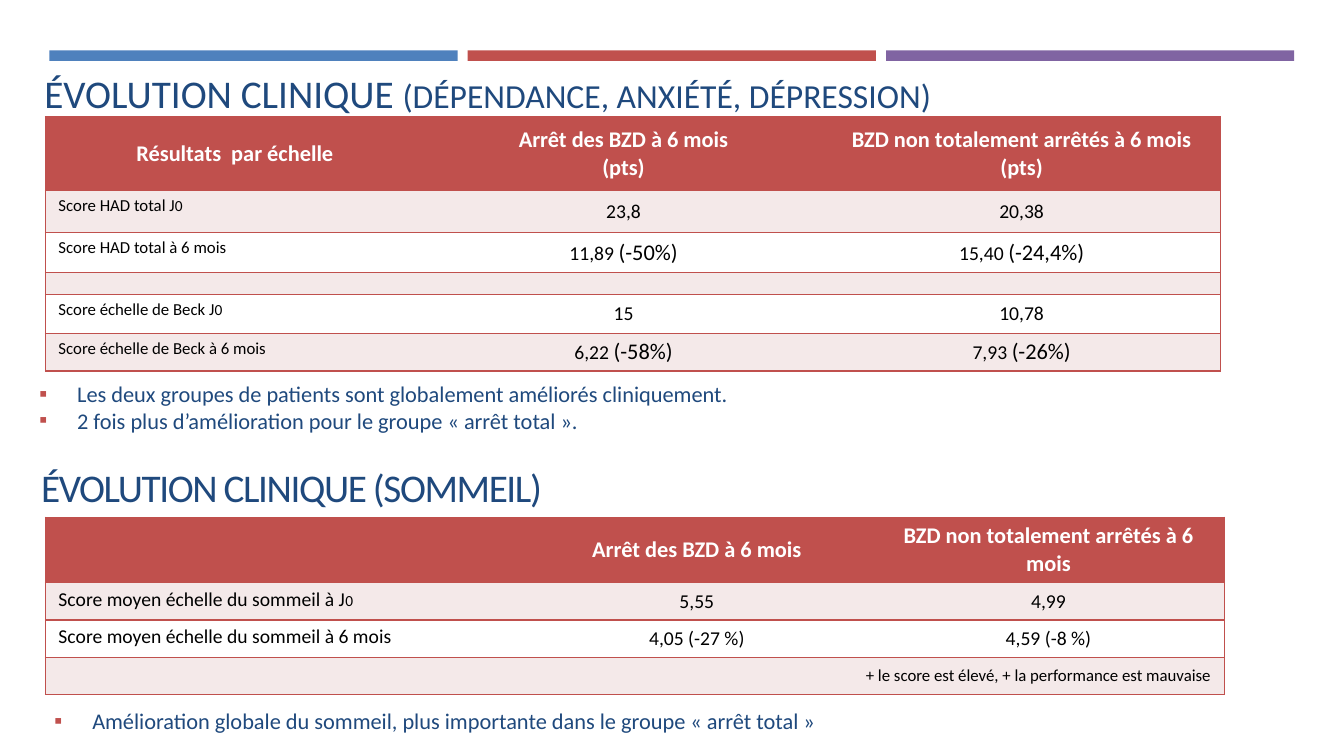
from dataclasses import dataclass

import lxml.etree
import pptx
import pptx.dml.color
import pptx.enum.shapes
import pptx.enum.text
import pptx.oxml.ns
import pptx.util

Pt = pptx.util.Pt
ALIGN = pptx.enum.text.PP_ALIGN
ANCHOR = pptx.enum.text.MSO_ANCHOR


@dataclass(frozen=True)
class Theme:
    font: str = "Calibri"
    navy: str = "1F497D"
    blue: str = "4F81BD"
    red: str = "C0504D"
    purple: str = "8064A2"
    band: str = "F4E9E9"
    white: str = "FFFFFF"
    black: str = "000000"
    heading: int = 28
    subheading: int = 24
    large: int = 16
    medium: int = 14
    small: int = 12
    index: int = 11
    spacer: int = 6


theme = Theme()


def write(paragraph, runs, color, bold=False):
    """Add (text, size) runs to the paragraph in the theme font."""
    for text, size in runs:
        run = paragraph.add_run()
        run.text = text
        for name, value in {"name": theme.font, "size": Pt(size), "bold": bold}.items():
            setattr(run.font, name, value)
        run.font.color.rgb = pptx.dml.color.RGBColor.from_string(color)


def add_xml(parent, tag, position=None, **attributes):
    element = lxml.etree.Element(pptx.oxml.ns.qn(tag), attributes)
    parent.insert(len(parent) if position is None else position, element)
    return element


presentation = pptx.Presentation()
presentation.slide_width, presentation.slide_height = Pt(960), Pt(540)
slide = presentation.slides.add_slide(presentation.slide_layouts.get_by_name("Two Content"))
title, clinical_list, sleep_list = slide.placeholders

# Colour bars
for column, color in enumerate((theme.blue, theme.red, theme.purple)):
    bar = slide.shapes.add_shape(
        pptx.enum.shapes.MSO_SHAPE.RECTANGLE,
        Pt(35.3 + 298.8 * column), Pt(36), Pt(291.6), Pt(7.5))
    bar.shadow.inherit = False
    bar.fill.solid()
    bar.fill.fore_color.rgb = pptx.dml.color.RGBColor.from_string(color)
    bar.line.fill.background()

# Headings
sleep_heading = slide.shapes.add_textbox(0, 0, 0, 0)
headings = [
    (title, (24.5, 30.2, 892, 56.2), ANCHOR.BOTTOM,
     [("ÉVOLUTION CLINIQUE ", theme.heading),
      ("(DÉPENDANCE, ANXIÉTÉ, DÉPRESSION)", theme.subheading)]),
    (sleep_heading, (22.3, 321.8, 815.8, 52.6), ANCHOR.MIDDLE,
     [("ÉVOLUTION CLINIQUE (SOMMEIL)", theme.heading)]),
]
for heading, box, anchor, runs in headings:
    heading.left, heading.top, heading.width, heading.height = map(Pt, box)
    frame = heading.text_frame
    for name, value in {"word_wrap": True, "vertical_anchor": anchor,
                        "auto_size": pptx.enum.text.MSO_AUTO_SIZE.NONE}.items():
        setattr(frame, name, value)
    frame.paragraphs[0].alignment = ALIGN.LEFT
    write(frame.paragraphs[0], runs, theme.navy)
sleep_heading.text_frame.paragraphs[0].runs[0].font._element.set("spc", "-100")

# Lists
lists = [
    (clinical_list, (20.9, 267.8, 560, 46.1),
     ["Les deux groupes de patients sont globalement améliorés cliniquement.",
      "2 fois plus d’amélioration pour le groupe « arrêt total »."]),
    (sleep_list, (31.7, 501.8, 884.2, 26.6),
     ["Amélioration globale du sommeil, plus importante dans le groupe « arrêt total »"]),
]
for findings, box, sentences in lists:
    findings.left, findings.top, findings.width, findings.height = map(Pt, box)
    frame = findings.text_frame
    frame.auto_size = pptx.enum.text.MSO_AUTO_SIZE.NONE
    for number, sentence in enumerate(sentences):
        paragraph = frame.add_paragraph() if number else frame.paragraphs[0]
        paragraph.space_before = Pt(0)
        properties = paragraph._p.get_or_add_pPr()
        properties.set("marL", str(Pt(27)))
        properties.set("indent", str(-Pt(27)))
        add_xml(add_xml(properties, "a:buClr"), "a:srgbClr", val=theme.red)
        add_xml(properties, "a:buFont", typeface=theme.font)
        add_xml(properties, "a:buChar", char="▪")
        write(paragraph, [(sentence, theme.large)], theme.navy)

# Tables: each cell is a list of paragraphs, each paragraph a list of (text, size)
L, M, S, I = theme.large, theme.medium, theme.small, theme.index
clinical_rows = [
    [[[("Résultats  par échelle", L)]],
     [[("Arrêt des BZD à 6 mois", L)], [("(pts)", L)]],
     [[("BZD non totalement arrêtés à 6 mois (pts)", L)]]],
    [[[("Score HAD total J", S), ("0", I)]], [[("23,8", M)]], [[("20,38", M)]]],
    [[[("Score HAD total à 6 mois", S)]],
     [[("11,89 ", M), ("(-50%)", L)]], [[("15,40 ", M), ("(-24,4%)", L)]]],
    [[], [], []],
    [[[("Score échelle de Beck J", S), ("0", I)]], [[("15", M)]], [[("10,78", M)]]],
    [[[("Score échelle de Beck à 6 mois", S)]],
     [[("6,22 ", M), ("(-58%)", L)]], [[("7,93 ", M), ("(-26%)", L)]]],
]
sleep_rows = [
    [[], [[("Arrêt des BZD à 6 mois", L)]], [[("BZD non totalement arrêtés à 6 mois", L)]]],
    [[[("Score moyen échelle du sommeil à J", M), ("0", I)]],
     [[("5,55", M)]], [[("4,99", M)]]],
    [[[("Score moyen échelle du sommeil à 6 mois", M)]],
     [[("4,05 (-27 %)", M)]], [[("4,59 (-8 %)", M)]]],
    [[[("+ le score est élevé, + la performance est mauvaise", S)]], [], []],
]
tables = [
    (83.5, (270.8, 284.4, 284.4), (52.6, 30.2, 28.1, 15.8, 28.1, 26.6), clinical_rows),
    (369.4, (339.8, 251.2, 251.2), (46.8, 26.6, 26.6, 26.6), sleep_rows),
]
for top, widths, heights, rows in tables:
    table = slide.shapes.add_table(
        len(rows), len(widths), Pt(32.4), Pt(top), Pt(sum(widths)), Pt(sum(heights))).table
    for column, width in zip(table.columns, widths):
        column.width = Pt(width)
    for r, (height, row) in enumerate(zip(heights, rows)):
        table.rows[r].height = Pt(height)
        note = rows is sleep_rows and r == len(rows) - 1
        if note:
            table.cell(r, 0).merge(table.cell(r, 2))
        for c, paragraphs in enumerate(row):
            cell = table.cell(r, c)
            label = c == 0 and r > 0 and not note
            layout = {"margin_left": Pt(9.4), "margin_right": Pt(9.4),
                      "margin_top": Pt(3.6), "margin_bottom": Pt(3.6),
                      "vertical_anchor": ANCHOR.TOP if label else ANCHOR.MIDDLE}
            for name, value in layout.items():
                setattr(cell, name, value)
            fill = theme.red if r == 0 else theme.band if r % 2 else theme.white
            cell.fill.solid()
            cell.fill.fore_color.rgb = pptx.dml.color.RGBColor.from_string(fill)
            outer = {"a:lnL": c == 0, "a:lnR": c == 2 or note, "a:lnT": True, "a:lnB": True}
            for position, (side, visible) in enumerate(outer.items()):
                border = add_xml(cell._tc.tcPr, side, position, w=str(Pt(1)))
                if visible:
                    add_xml(add_xml(border, "a:solidFill"), "a:srgbClr", val=theme.red)
                else:
                    add_xml(border, "a:noFill")
            frame = cell.text_frame
            if not paragraphs:
                add_xml(frame.paragraphs[0]._p, "a:endParaRPr", sz=str(theme.spacer * 100))
            for number, runs in enumerate(paragraphs):
                paragraph = frame.add_paragraph() if number else frame.paragraphs[0]
                paragraph.alignment = ALIGN.RIGHT if note else ALIGN.LEFT if label else ALIGN.CENTER
                write(paragraph, runs, theme.black if r else theme.white, bold=r == 0)

presentation.save("out.pptx")
